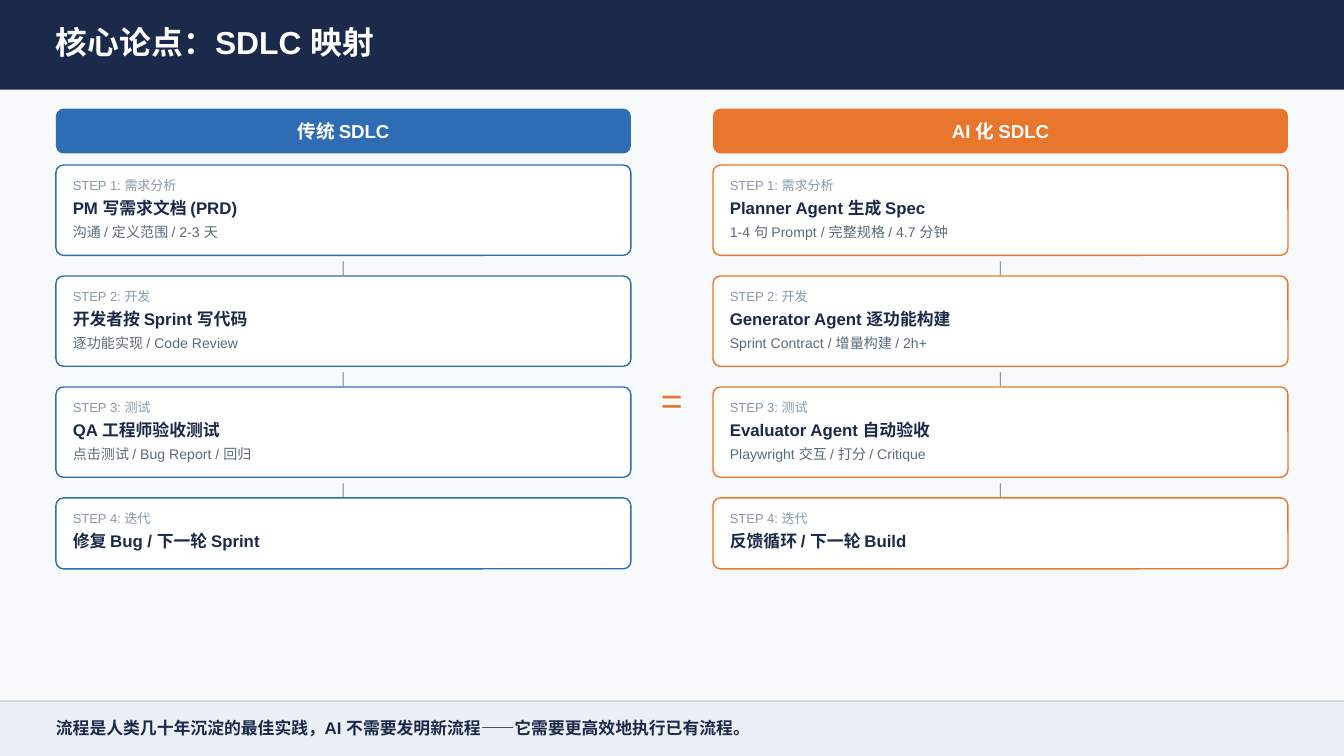
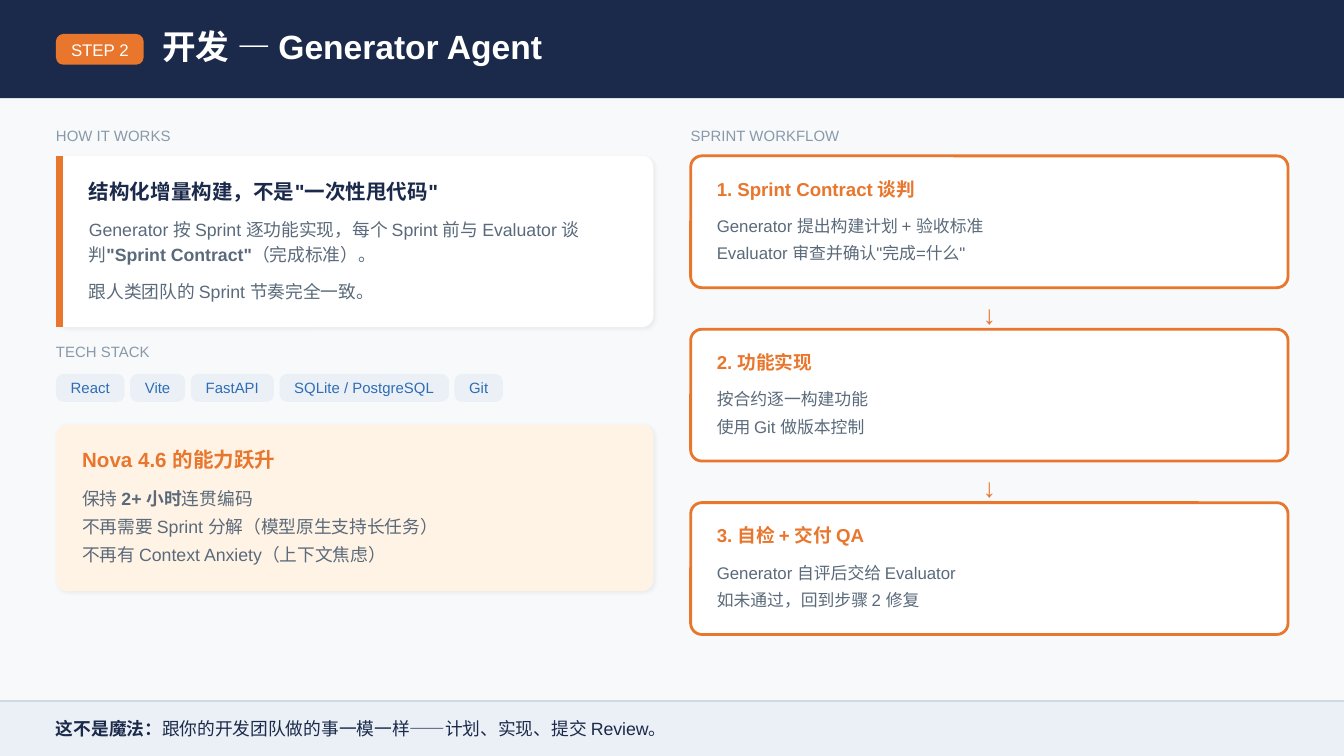
"""Build two slides that map the classic SDLC to an agent-driven one."""
from collections import namedtuple

from pptx import Presentation
from pptx.dml.color import RGBColor
from pptx.enum.shapes import MSO_CONNECTOR as CONNECTOR, MSO_SHAPE as SHAPE
from pptx.enum.text import MSO_ANCHOR as ANCHOR, MSO_AUTO_SIZE as AUTO_SIZE, PP_ALIGN as ALIGN
from pptx.oxml import parse_xml
from pptx.oxml.ns import nsdecls
from pptx.util import Pt

Style = namedtuple("Style", "size color bold leading", defaults=(False, None))


class Theme:
    """Colours, type styles and shared measures."""
    font = "Arial"
    navy, blue, orange = "1B2A4A", "2E6DB4", "E8762D"
    white, paper, pale, cream = "FFFFFF", "F8F9FA", "EBF0F7", "FFF3E6"
    rule, muted, slate = "D0D8E0", "8899AA", "5A6A7A"
    width, height, margin = 720, 405, 30
    footer_top = 375.5

    mapping_title = Style(17, white, True)
    step_title = Style(18, white, True)
    column_head = Style(10, white, True)
    step_label = Style(7, muted)
    step_name = Style(9, navy, True)
    step_detail = Style(7.5, slate)
    link = Style(8, muted, False, 8)
    equals = Style(20, orange)
    badge = Style(9, white)
    section = Style(8, muted)
    card_head = Style(11, navy, True)
    leap_head = Style(11, orange, True)
    body = Style(9.5, slate, False, 13.3)
    tag = Style(8, blue)
    stage_head = Style(10, orange, True)
    stage_line = Style(9, slate, False, 12.6)
    arrow = Style(14, orange)
    mapping_footer = Style(9, navy, True)
    step_footer = Style(9.5, navy, True)


MAPPING = {
    "title": "核心论点：SDLC 映射",
    "footer": ["流程是人类几十年沉淀的最佳实践，AI 不需要发明新流程——它需要更高效地执行已有流程。"],
    "columns": [
        (30, Theme.blue, "传统 SDLC", [
            ("STEP 1: 需求分析", "PM 写需求文档 (PRD)", "沟通 / 定义范围 / 2-3 天"),
            ("STEP 2: 开发", "开发者按 Sprint 写代码", "逐功能实现 / Code Review"),
            ("STEP 3: 测试", "QA 工程师验收测试", "点击测试 / Bug Report / 回归"),
            ("STEP 4: 迭代", "修复 Bug / 下一轮 Sprint"),
        ]),
        (382, Theme.orange, "AI 化 SDLC", [
            ("STEP 1: 需求分析", "Planner Agent 生成 Spec", "1-4 句 Prompt / 完整规格 / 4.7 分钟"),
            ("STEP 2: 开发", "Generator Agent 逐功能构建", "Sprint Contract / 增量构建 / 2h+"),
            ("STEP 3: 测试", "Evaluator Agent 自动验收", "Playwright 交互 / 打分 / Critique"),
            ("STEP 4: 迭代", "反馈循环 / 下一轮 Build"),
        ]),
    ],
}

DEVELOPMENT = {
    "badge": "STEP 2",
    "title": "开发 — Generator Agent",
    "footer": ["这不是魔法：", "跟你的开发团队做的事一模一样——计划、实现、提交 Review。"],
    "sections": [(30, 68, "HOW IT WORKS"), (30, 183.5, "TECH STACK"), (370, 68, "SPRINT WORKFLOW")],
    "idea": "结构化增量构建，不是\"一次性甩代码\"",
    "idea_lines": [
        (115.2, 27, ["Generator 按 Sprint 逐功能实现，每个 Sprint 前与 Evaluator 谈判",
                     "\"Sprint Contract\"", "（完成标准）。"]),
        (148.3, 13, ["跟人类团队的 Sprint 节奏完全一致。"]),
    ],
    "tags": [("React", 36.7), ("Vite", 29.5), ("FastAPI", 44.6),
             ("SQLite / PostgreSQL", 90.7), ("Git", 25.9)],
    "leap": "Nova 4.6 的能力跃升",
    "leap_lines": [
        ["保持 ", "2+ 小时", "连贯编码"],
        ["不再需要 Sprint 分解（模型原生支持长任务）"],
        ["不再有 Context Anxiety（上下文焦虑）"],
    ],
    "stages": [
        ("1. Sprint Contract 谈判", "Generator 提出构建计划 + 验收标准", "Evaluator 审查并确认\"完成=什么\""),
        ("2. 功能实现", "按合约逐一构建功能", "使用 Git 做版本控制"),
        ("3. 自检 + 交付 QA", "Generator 自评后交给 Evaluator", "如未通过，回到步骤 2 修复"),
    ],
}


def rgb(color):
    """Turn a hex string into a colour."""
    return RGBColor.from_string(color)


def write(frame, runs, style, align=ALIGN.LEFT, anchor=ANCHOR.TOP, wrap=True):
    """Fill a text frame with runs; every second run flips the bold setting."""
    frame.margin_left = frame.margin_right = frame.margin_top = frame.margin_bottom = 0
    frame.auto_size = AUTO_SIZE.NONE
    frame.word_wrap = wrap
    frame.vertical_anchor = anchor
    paragraph = frame.paragraphs[0]
    paragraph.alignment = align
    if style.leading:
        paragraph.line_spacing = Pt(style.leading)
    for index, text in enumerate(runs):
        run = paragraph.add_run()
        run.text = text
        run.font.name = Theme.font
        run.font.size = Pt(style.size)
        run.font.bold = style.bold != (index % 2 == 1)
        run.font.color.rgb = rgb(style.color)


def add_text(slide, left, top, width, height, runs, style, align=ALIGN.LEFT):
    """Add a text box without insets."""
    box = slide.shapes.add_textbox(Pt(left), Pt(top), Pt(width), Pt(height))
    write(box.text_frame, runs, style, align)


def add_panel(slide, left, top, width, height, fill, radius=0, line=None, weight=0.75, shadow=False):
    """Add a flat rectangle, rounded when a radius is given."""
    kind = SHAPE.ROUNDED_RECTANGLE if radius else SHAPE.RECTANGLE
    shape = slide.shapes.add_shape(kind, Pt(left), Pt(top), Pt(width), Pt(height))
    if radius:
        shape.adjustments[0] = radius / min(width, height)
    shape.fill.solid()
    shape.fill.fore_color.rgb = rgb(fill)
    if line:
        shape.line.color.rgb = rgb(line)
        shape.line.width = Pt(weight)
    else:
        shape.line.fill.background()
    shape.shadow.inherit = False
    if shadow:
        effects = shape._element.spPr.find("{*}effectLst")
        effects.append(parse_xml(
            f'<a:outerShdw {nsdecls("a")} blurRad="{Pt(2.2)}" dist="{Pt(1.1)}" dir="2700000">'
            '<a:srgbClr val="000000"><a:alpha val="6000"/></a:srgbClr></a:outerShdw>'))
    return shape


def add_label(slide, left, top, width, height, fill, text, style):
    """Add a small rounded panel with centred text."""
    shape = add_panel(slide, left, top, width, height, fill, radius=4)
    write(shape.text_frame, [text], style, ALIGN.CENTER, ANCHOR.MIDDLE, wrap=False)


def add_line(slide, start, end, color, weight):
    """Add a straight line without shadow."""
    line = slide.shapes.add_connector(CONNECTOR.STRAIGHT, *map(Pt, start + end))
    line.line.color.rgb = rgb(color)
    line.line.width = Pt(weight)
    line._element.spPr.append(parse_xml(f'<a:effectLst {nsdecls("a")}/>'))


def add_base(presentation, content, band_height, title_box, title_style, footer_style):
    """Add a slide with its title band and footer."""
    slide = presentation.slides.add_slide(presentation.slide_layouts[5])
    slide.background.fill.solid()
    slide.background.fill.fore_color.rgb = rgb(Theme.paper)
    add_panel(slide, 0, 0, Theme.width, band_height, Theme.navy)
    title = slide.shapes.title
    title.left, title.top, title.width, title.height = map(Pt, title_box)
    write(title.text_frame, [content["title"]], title_style)
    slide.shapes._spTree.append(title._element)
    top = Theme.footer_top
    add_panel(slide, 0, top, Theme.width, Theme.height - top, Theme.pale)
    add_line(slide, (0, top), (Theme.width, top), Theme.rule, 0.75)
    add_text(slide, Theme.margin, top + 8.8, 673, 13, content["footer"], footer_style)
    return slide


def build_mapping(presentation):
    """Build the slide that sets both life cycles side by side."""
    slide = add_base(presentation, MAPPING, 48, (Theme.margin, 12.2, 673, 24),
                     Theme.mapping_title, Theme.mapping_footer)
    width, first_top, pitch = 308, 88.4, 59.45
    parts = [(6.8, 10, Theme.step_label), (17.4, 13, Theme.step_name), (31.2, 11, Theme.step_detail)]
    for left, color, heading, steps in MAPPING["columns"]:
        add_label(slide, left, 58.2, width, 24, color, heading, Theme.column_head)
        for index, step in enumerate(steps):
            top = first_top + index * pitch
            height = 48.4 if len(step) == 3 else 38
            add_panel(slide, left, top, width, height, Theme.white, radius=4, line=color)
            for text, (offset, text_height, style) in zip(step, parts):
                add_text(slide, left + 9, top + offset, 297, text_height, [text], style)
            if index < len(steps) - 1:
                add_text(slide, left, top + 51.4, width, 8, ["|"], Theme.link, ALIGN.CENTER)
    add_text(slide, 354, 202.3, 12.5, 23, ["="], Theme.equals)


def build_development(presentation):
    """Build the slide about the development step."""
    slide = add_base(presentation, DEVELOPMENT, 52.6, (87, 13.7, 210, 24.5),
                     Theme.step_title, Theme.step_footer)
    left, width, card_top = Theme.margin, 320, 83.5
    add_label(slide, left, 18.2, 47, 16.5, Theme.orange, DEVELOPMENT["badge"], Theme.badge)
    for section_left, top, text in DEVELOPMENT["sections"]:
        add_text(slide, section_left, top, 326, 9, [text], Theme.section)

    add_panel(slide, left, card_top, width, 91.7, Theme.white, radius=6, shadow=True)
    add_line(slide, (left + 1.9, card_top), (left + 1.9, card_top + 91.7), Theme.orange, 3.75)
    add_text(slide, 47.6, 95.8, 294, 16, [DEVELOPMENT["idea"]], Theme.card_head)
    for top, height, runs in DEVELOPMENT["idea_lines"]:
        add_text(slide, 47.6, top, 294, height, runs, Theme.body)

    tag_left = left
    for text, tag_width in DEVELOPMENT["tags"]:
        add_label(slide, tag_left, 200.3, tag_width, 15, Theme.pale, text, Theme.tag)
        tag_left += tag_width + 3

    add_panel(slide, left, 227.5, width, 89.2, Theme.cream, radius=6, shadow=True)
    add_text(slide, 44, 239.4, 298, 16, [DEVELOPMENT["leap"]], Theme.leap_head)
    for index, runs in enumerate(DEVELOPMENT["leap_lines"]):
        add_text(slide, 44, 259.2 + index * 15.2, 298, 13, runs, Theme.body)

    stage_left, stage_pitch = 370, 92.9
    stages = DEVELOPMENT["stages"]
    for index, (heading, *lines) in enumerate(stages):
        top = card_top + index * stage_pitch
        add_panel(slide, stage_left, top, width, 70.6, Theme.white, radius=6,
                  line=Theme.orange, weight=1.5)
        add_text(slide, stage_left + 14, top + 11.6, 299, 14, [heading], Theme.stage_head)
        for row, text in enumerate(lines):
            add_text(slide, stage_left + 14, top + 30.3 + row * 14.5, 299, 12.5, [text], Theme.stage_line)
        if index < len(stages) - 1:
            add_text(slide, stage_left, top + 76.3, width, 16.5, ["↓"], Theme.arrow, ALIGN.CENTER)


def main():
    """Build and save the presentation."""
    presentation = Presentation()
    presentation.slide_width, presentation.slide_height = Pt(Theme.width), Pt(Theme.height)
    build_mapping(presentation)
    build_development(presentation)
    presentation.save("out.pptx")


if __name__ == "__main__":
    main()
